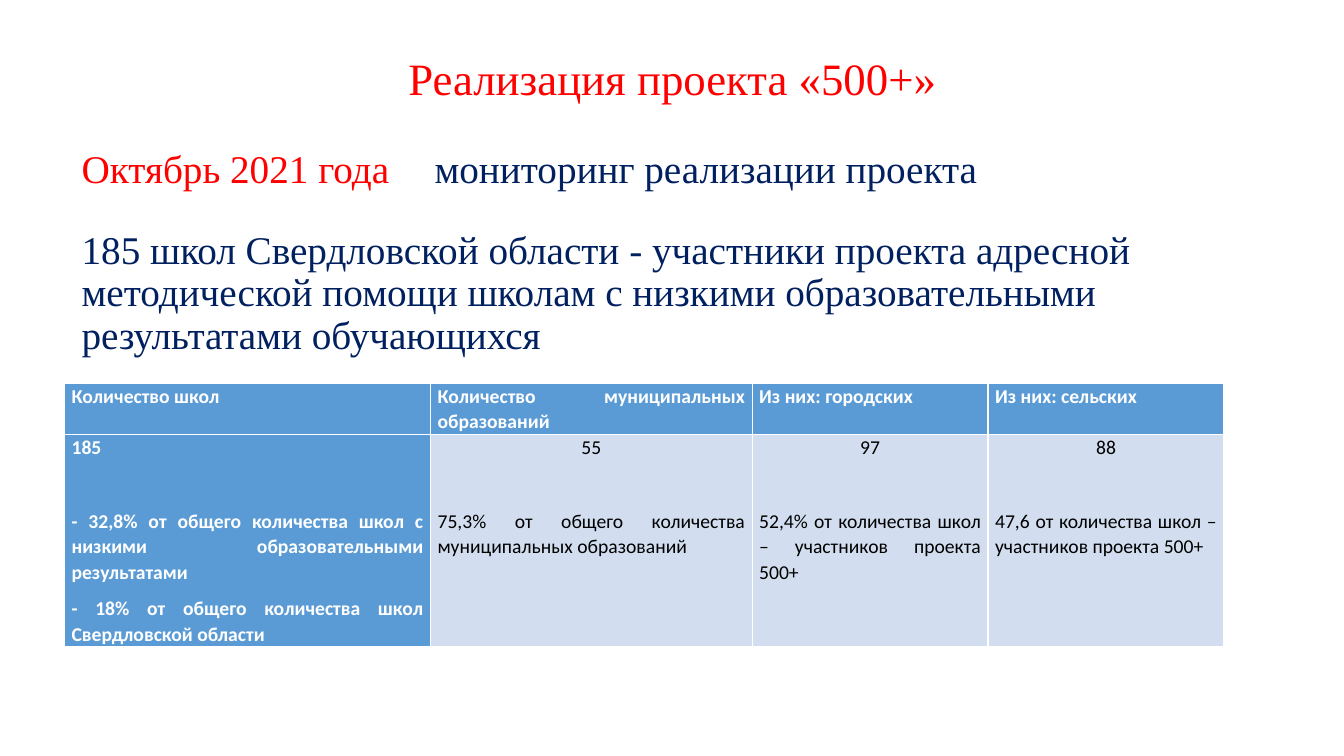
from lxml import etree
from pptx import Presentation
from pptx.dml.color import RGBColor
from pptx.enum.text import MSO_ANCHOR, MSO_AUTO_SIZE, PP_ALIGN
from pptx.oxml.ns import qn
from pptx.util import Inches, Pt

CENTER, JUSTIFY, LEFT = PP_ALIGN.CENTER, PP_ALIGN.JUSTIFY, PP_ALIGN.LEFT
MIDDLE, TOP = MSO_ANCHOR.MIDDLE, MSO_ANCHOR.TOP
NO_FIT = MSO_AUTO_SIZE.NONE

RED, NAVY, WHITE, BLACK = "FF0000", "002060", "FFFFFF", "000000"
BLUE, PALE = "5B9BD5", "D2DEEF"
SERIF, SANS = "Times New Roman", "Calibri"

COLUMNS = [3.63, 3.19, 2.34, 2.34]
ROWS = [0.5, 2.08]
HEADERS = ["Количество школ", "Количество муниципальных образований",
           "Из них: городских", "Из них: сельских"]
RESULTS = [
    ["185",
     "- 32,8% от общего количества школ с низкими образовательными результатами",
     "- 18% от общего количества школ Свердловской области"],
    ["55", "75,3% от общего количества муниципальных образований"],
    ["97", "52,4% от количества школ – участников проекта 500+"],
    ["88", "47,6 от количества школ – участников проекта 500+"],
]


def rgb(value):
    """Turn a hex string into a colour."""
    return RGBColor.from_string(value)


def apply(obj, values):
    """Set attributes of an object from a dict."""
    for name, value in values.items():
        setattr(obj, name, value)


def add_run(p, text, size, font, color, bold=False):
    """Append a formatted run to a paragraph."""
    r = p.add_run()
    r.text = text
    apply(r.font, {"size": Pt(size), "name": font, "bold": bold})
    r.font.color.rgb = rgb(color)


def place(sp, box, anchor):
    """Move a placeholder to a box and return its text frame."""
    names = ("left", "top", "width", "height")
    apply(sp, dict(zip(names, map(Inches, box))))
    tf = sp.text_frame
    apply(tf, {"word_wrap": True, "auto_size": NO_FIT, "vertical_anchor": anchor})
    return tf


def add_title(sp, box):
    """Fill the title placeholder."""
    p = place(sp, box, MIDDLE).paragraphs[0]
    apply(p, {"alignment": CENTER, "line_spacing": 0.9})
    add_run(p, "Реализация проекта «500+»", 32, SERIF, RED)


def add_body(sp, box):
    """Fill the body placeholder with the monitoring date and the participants."""
    tf = place(sp, box, TOP)
    lines = [
        (10, [("Октябрь 2021 года\t", RED), ("мониторинг реализации проекта", NAVY)]),
        (28, [("185 школ Свердловской области - участники проекта адресной "
               "методической помощи школам с низкими образовательными "
               "результатами обучающихся", NAVY)]),
    ]
    for i, (before, runs) in enumerate(lines):
        p = tf.add_paragraph() if i else tf.paragraphs[0]
        apply(p, {"alignment": LEFT, "line_spacing": 0.9, "space_before": Pt(before)})
        pPr = p._p.get_or_add_pPr()
        pPr.set("marL", "0")
        pPr.set("indent", "0")
        etree.SubElement(pPr, qn("a:buNone"))
        tabs = etree.SubElement(pPr, qn("a:tabLst"))
        etree.SubElement(tabs, qn("a:tab"), pos=str(Inches(3.53)), algn="l")
        for text, color in runs:
            add_run(p, text, 28, SERIF, color)


def fill_cell(cell, texts, strong, centered):
    """Fill a cell, setting the figure apart from the notes under it."""
    cell.fill.solid()
    cell.fill.fore_color.rgb = rgb(BLUE if strong else PALE)
    apply(cell, {"margin_left": Inches(0.07), "margin_right": Inches(0.07),
                 "margin_top": 0, "margin_bottom": 0})
    tf = cell.text_frame
    for i, text in enumerate(texts):
        p = tf.add_paragraph() if i else tf.paragraphs[0]
        is_figure = i == 0 and len(texts) > 1
        apply(p, {"alignment": CENTER if centered and is_figure else JUSTIFY,
                  "line_spacing": 1.07,
                  "space_after": Pt(34.5 if is_figure else 8)})
        add_run(p, text, 14, SANS, WHITE if strong else BLACK, strong)


def add_results(slide, left, top):
    """Add the table of schools at the given corner."""
    table = slide.shapes.add_table(
        len(ROWS), len(COLUMNS), Inches(left), Inches(top),
        Inches(sum(COLUMNS)), Inches(sum(ROWS))).table
    apply(table, {"first_row": True, "first_col": True, "horz_banding": False})
    for column, width in zip(table.columns, COLUMNS):
        column.width = Inches(width)
    for row, height in zip(table.rows, ROWS):
        row.height = Inches(height)
    for c, (header, texts) in enumerate(zip(HEADERS, RESULTS)):
        fill_cell(table.cell(0, c), [header], True, False)
        fill_cell(table.cell(1, c), texts, c == 0, c > 0)


def main():
    """Build and save the slide."""
    prs = Presentation()
    apply(prs, {"slide_width": Inches(13.33), "slide_height": Inches(7.5)})
    slide = prs.slides.add_slide(prs.slide_layouts[1])
    add_title(slide.shapes.title, (0.92, 0.4, 11.5, 0.81))
    add_body(slide.placeholders[1], (0.71, 1.43, 11.5, 4.4))
    add_results(slide, 0.64, 3.8)
    prs.save("out.pptx")


if __name__ == "__main__":
    main()
